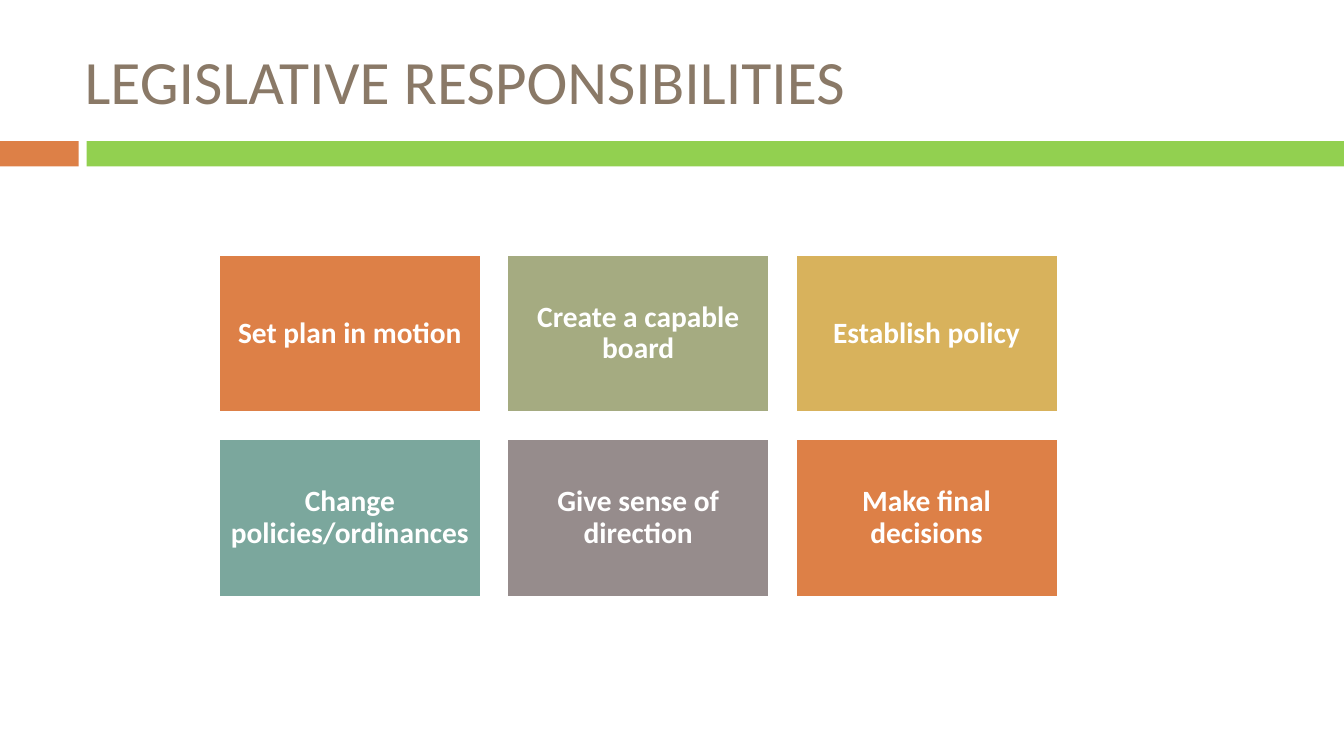
from pptx import Presentation
from pptx.dml.color import RGBColor
from pptx.enum.shapes import MSO_SHAPE as Shape
from pptx.enum.text import MSO_ANCHOR as Anchor, PP_ALIGN as Align
from pptx.util import Inches, Pt

FONT = "Calibri"
WHITE = RGBColor(0xFF, 0xFF, 0xFF)
BROWN = RGBColor(0x8A, 0x79, 0x67)
ORANGE = RGBColor(0xDD, 0x80, 0x47)
GREEN = RGBColor(0x92, 0xD0, 0x50)
OLIVE = RGBColor(0xA5, 0xAB, 0x81)
GOLD = RGBColor(0xD8, 0xB2, 0x5C)
TEAL = RGBColor(0x7B, 0xA7, 0x9D)
GRAY = RGBColor(0x96, 0x8C, 0x8C)

TITLE = "LEGISLATIVE RESPONSIBILITIES"
BANDS = [(0, 0.78, ORANGE), (0.86, 12.47, GREEN)]
DUTIES = [
    ("Set plan in motion", ORANGE),
    ("Create a capable board", OLIVE),
    ("Establish policy", GOLD),
    ("Change policies/ordinances", TEAL),
    ("Give sense of direction", GRAY),
    ("Make final decisions", ORANGE),
]
COLUMNS = 3
GRID_LEFT, GRID_TOP = 2.17, 2.53
CARD_WIDTH, CARD_HEIGHT = 2.6, 1.56
COLUMN_STEP, ROW_STEP = 2.86, 1.83


def add_block(page, left, top, width, height, color):
    block = page.shapes.add_shape(
        Shape.RECTANGLE, Inches(left), Inches(top), Inches(width), Inches(height))
    block.shadow.inherit = False
    block.fill.solid()
    block.fill.fore_color.rgb = color
    block.line.fill.background()
    return block


def write(box, text, size, color, bold=False):
    frame = box.text_frame
    frame.word_wrap = True
    frame.vertical_anchor = Anchor.MIDDLE
    frame.text = text
    para = frame.paragraphs[0]
    font = para.runs[0].font
    font.name = FONT
    font.size = Pt(size)
    font.bold = bold
    font.color.rgb = color
    return para


def add_card(page, index, text, color):
    row, column = divmod(index, COLUMNS)
    card = add_block(page, GRID_LEFT + column * COLUMN_STEP,
                     GRID_TOP + row * ROW_STEP, CARD_WIDTH, CARD_HEIGHT, color)
    card.line.color.rgb = WHITE
    card.line.width = Pt(1.5)
    frame = card.text_frame
    frame.margin_left = frame.margin_right = Inches(0.09)
    frame.margin_top = frame.margin_bottom = Inches(0.09)
    para = write(card, text, 21, WHITE, bold=True)
    para.alignment = Align.CENTER
    para.line_spacing = 0.9


def main():
    deck = Presentation()
    deck.slide_width, deck.slide_height = Inches(13.33), Inches(7.5)
    page = deck.slides.add_slide(deck.slide_layouts[6])
    for left, width, color in BANDS:
        add_block(page, left, 1.4, width, 0.25, color)
    title = page.shapes.add_textbox(
        Inches(0.74), Inches(0.25), Inches(11.89), Inches(1.08))
    write(title, TITLE, 44, BROWN)
    for index, (text, color) in enumerate(DUTIES):
        add_card(page, index, text, color)
    deck.save("out.pptx")


if __name__ == "__main__":
    main()
